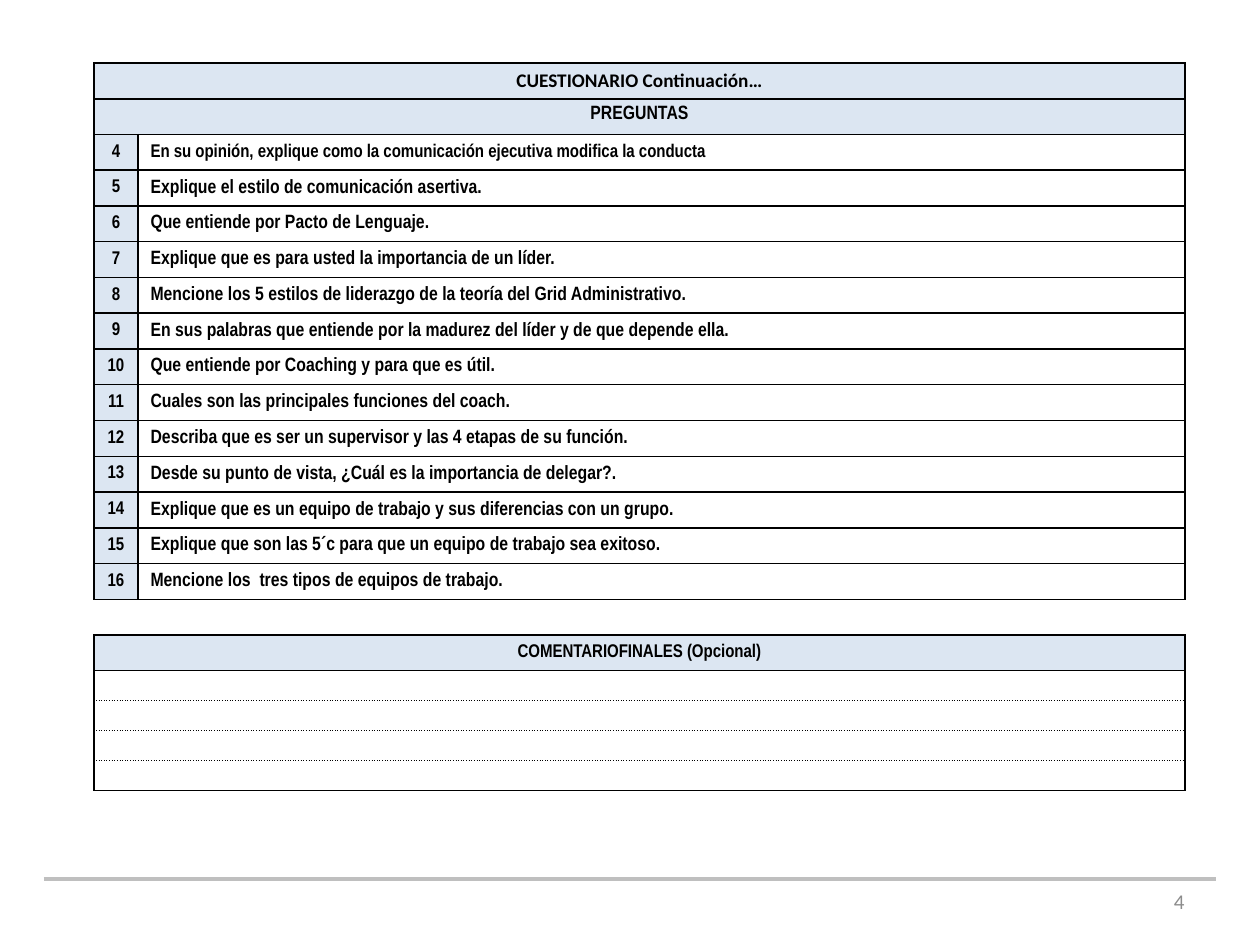
from lxml import etree
from pptx import Presentation
from pptx import util as u
from pptx.dml.color import RGBColor
from pptx.enum import shapes, text
from pptx.oxml.ns import qn

PX = 914400 / 126
BLACK = RGBColor(0x00, 0x00, 0x00)
WHITE = RGBColor(0xFF, 0xFF, 0xFF)
PALE_BLUE = RGBColor(0xDC, 0xE6, 0xF2)
RULE_GREY = RGBColor(0xBF, 0xBF, 0xBF)
NUMBER_GREY = RGBColor(0x8C, 0x8C, 0x8C)
NARROW = "Arial Narrow"
CENTER, JUSTIFY = text.PP_ALIGN.CENTER, text.PP_ALIGN.JUSTIFY
MIDDLE, TOP = text.MSO_ANCHOR.MIDDLE, text.MSO_ANCHOR.TOP

FIRST_NUMBER = 4
QUESTIONS = [
    "En su opinión, explique como la comunicación ejecutiva modifica la conducta",
    "Explique el estilo de comunicación asertiva.",
    "Que entiende por Pacto de Lenguaje.",
    "Explique que es para usted la importancia de un líder.",
    "Mencione los 5 estilos de liderazgo de la teoría del Grid Administrativo.",
    "En sus palabras que entiende por la madurez del líder y de que depende ella.",
    "Que entiende por Coaching y para que es útil.",
    "Cuales son las principales funciones del coach.",
    "Describa que es ser un supervisor y las 4 etapas de su función.",
    "Desde su punto de vista, ¿Cuál es la importancia de delegar?.",
    "Explique que es un equipo de trabajo y sus diferencias con un grupo.",
    "Explique que son las 5´c para que un equipo de trabajo sea exitoso.",
    "Mencione los  tres tipos de equipos de trabajo.",
]
COMMENT_LINES = 4
SPACER_ROW = 2 + len(QUESTIONS)
COMMENT_HEADER_ROW = SPACER_ROW + 1
TEXT_ROWS = COMMENT_HEADER_ROW + 1


def px(length):
    return u.Emu(round(length * PX))


def set_font(font, color=BLACK, **values):
    for name, value in values.items():
        setattr(font, name, value)
    font.color.rgb = color


def set_borders(cell, **dashes):
    """Draw the sides L, R, T and B with a dash style, or hide them with None."""
    properties = cell._tc.get_or_add_tcPr()
    for position, side in enumerate("LRTB"):
        dash = dashes.get(side, "solid")
        line = etree.Element(qn(f"a:ln{side}"), w=str(u.Pt(1)))
        if dash:
            fill = etree.SubElement(line, qn("a:solidFill"))
            etree.SubElement(fill, qn("a:srgbClr"), val=str(BLACK))
            etree.SubElement(line, qn("a:prstDash"), val=dash)
        else:
            etree.SubElement(line, qn("a:noFill"))
        properties.insert(position, line)


def fill_cell(cell, color):
    cell.fill.solid()
    cell.fill.fore_color.rgb = color


def write_cell(cell, wording, size, align=CENTER, anchor=MIDDLE, font=NARROW):
    cell.vertical_anchor = anchor
    paragraph = cell.text_frame.paragraphs[0]
    paragraph.alignment = align
    run = paragraph.add_run()
    run.text = wording
    set_font(run.font, name=font, size=u.Pt(size), bold=True)


def merge_row(table, row, color, **dashes):
    first, last = table.cell(row, 0), table.cell(row, 1)
    first.merge(last)
    for cell in (first, last):
        fill_cell(cell, color)
        set_borders(cell, **dashes)
    return first


def empty_row(table, row, **dashes):
    """Keep a blank row low with small type and no vertical margins."""
    cell = merge_row(table, row, WHITE, **dashes)
    cell.margin_top = cell.margin_bottom = 0
    paragraph = cell.text_frame.paragraphs[0]._p
    etree.SubElement(paragraph, qn("a:endParaRPr"), sz="800")


def add_questionnaire(slide):
    row_count = TEXT_ROWS + COMMENT_LINES
    frame = slide.shapes.add_table(row_count, 2, px(94), px(63), px(1091), px(726))
    table = frame.table
    table.first_row = table.horz_banding = False
    for column, width in zip(table.columns, (44, 1047)):
        column.width = px(width)
    for index, row in enumerate(table.rows):
        row.height = px(606) // TEXT_ROWS if index < TEXT_ROWS else px(30)

    # Headings
    write_cell(merge_row(table, 0, PALE_BLUE), "CUESTIONARIO Continuación…", 11, font="Calibri")
    write_cell(merge_row(table, 1, PALE_BLUE), "PREGUNTAS", 11, anchor=TOP)

    # Numbered questions
    for index, question in enumerate(QUESTIONS):
        number_cell, question_cell = table.cell(index + 2, 0), table.cell(index + 2, 1)
        fill_cell(number_cell, PALE_BLUE)
        question_cell.fill.background()
        write_cell(number_cell, str(FIRST_NUMBER + index), 10.5)
        write_cell(question_cell, question, 11 if index else 10.5, JUSTIFY)
        set_borders(number_cell)
        set_borders(question_cell)

    # Final comments with dotted writing lines
    empty_row(table, SPACER_ROW, L=None, R=None)
    write_cell(merge_row(table, COMMENT_HEADER_ROW, PALE_BLUE),
               "COMENTARIOFINALES (Opcional)", 10.5)
    for index in range(COMMENT_LINES):
        empty_row(table, TEXT_ROWS + index,
                  T="sysDot" if index else "solid",
                  B="sysDot" if index < COMMENT_LINES - 1 else "solid")


def add_footer_rule(slide):
    rule = slide.shapes.add_connector(
        shapes.MSO_CONNECTOR.STRAIGHT, px(44), px(879), px(1216), px(879))
    rule.line.color.rgb = RULE_GREY
    rule.line.width = u.Pt(2)
    etree.SubElement(rule._element.spPr, qn("a:effectLst"))


def add_page_number(slide, number):
    frame = slide.shapes.add_textbox(px(903), px(876), px(294), px(50)).text_frame
    frame.word_wrap = True
    frame.vertical_anchor = MIDDLE
    paragraph = frame.paragraphs[0]
    paragraph.alignment = text.PP_ALIGN.RIGHT
    run = paragraph.add_run()
    run.text = number
    set_font(run.font, NUMBER_GREY, name="Calibri", size=u.Pt(12))


def main():
    presentation = Presentation()
    presentation.slide_width, presentation.slide_height = px(1260), px(945)
    slide = presentation.slides.add_slide(presentation.slide_layouts[6])
    add_page_number(slide, "4")
    add_footer_rule(slide)
    add_questionnaire(slide)
    presentation.save("out.pptx")


if __name__ == "__main__":
    main()
